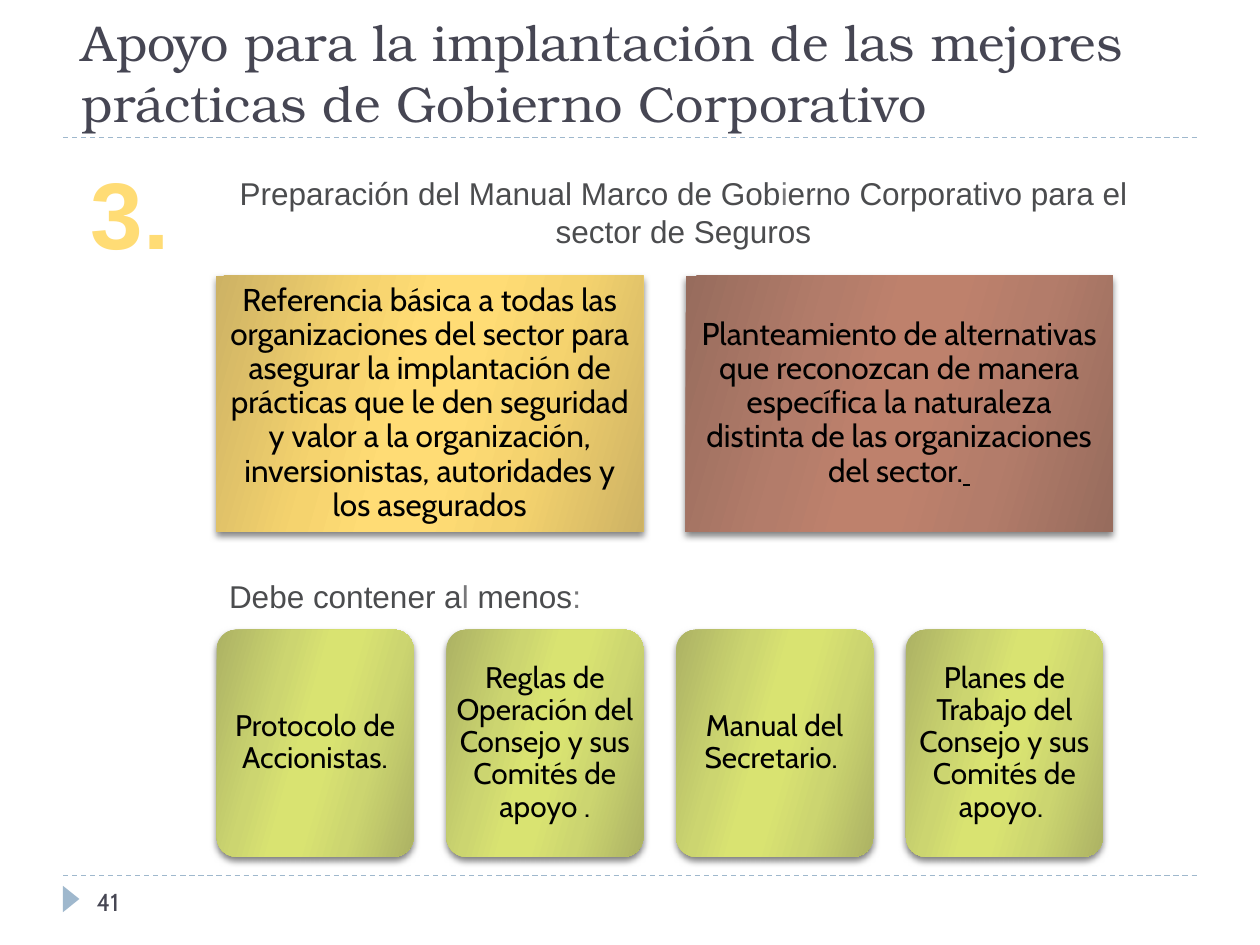
import pptx
import pptx.util
import pptx.dml.color
import pptx.enum.dml
import pptx.enum.shapes
import pptx.enum.text
import pptx.oxml
import pptx.oxml.ns
import lxml.etree

Pt = pptx.util.Pt
RGB = pptx.dml.color.RGBColor.from_string
SHAPE = pptx.enum.shapes.MSO_SHAPE
ALIGN = pptx.enum.text.PP_ALIGN
ANCHOR = pptx.enum.text.MSO_ANCHOR
qn = pptx.oxml.ns.qn
NS = pptx.oxml.ns.nsdecls("a")

COLORS = {
    "rule": "9FB8CD", "title": "464653", "body": "4B4C4E", "faint": "78787A",
    "black": "000000", "number_edge": "C2A651",
}
GRADIENTS = {
    "gold": ["CDB264", "F5D36E", "FFDC75"],
    "clay": ["976C5D", "B37C6A", "BE816C"],
    "lime": ["ACB264", "CCD570", "D9E371"],
}


def gradient(stops, angle):
    marks = "".join(
        f'<a:gs pos="{pos * 1000}"><a:srgbClr val="{color}"/></a:gs>' for pos, color in stops)
    return pptx.oxml.parse_xml(
        f'<a:gradFill {NS} rotWithShape="1"><a:gsLst>{marks}</a:gsLst>'
        f'<a:lin ang="{angle * 60000}" scaled="0"/></a:gradFill>')


def write(shape, pieces, size, font, align=ALIGN.LEFT, wrap=True):
    frame = shape.text_frame
    frame.word_wrap = wrap
    paragraph = frame.paragraphs[0]
    paragraph.alignment = align
    for text, color in pieces:
        run = paragraph.add_run()
        run.text = text
        run.font.size = Pt(size)
        run.font.name = font
        run.font.color.rgb = RGB(COLORS[color])
    return paragraph


deck = pptx.Presentation()
deck.slide_width, deck.slide_height = Pt(720), Pt(540)
slide = deck.slides.add_slide(deck.slide_layouts[5])
shapes = slide.shapes

title = shapes.title
title.left, title.top, title.width, title.height = Pt(39.6), Pt(5.8), Pt(648), Pt(73.4)
title.text_frame.vertical_anchor = ANCHOR.BOTTOM
title.text_frame.auto_size = pptx.enum.text.MSO_AUTO_SIZE.NONE
write(title, [("Apoyo para la implantación de las mejores prácticas de Gobierno Corporativo", "title")],
      28.8, "TeX Gyre Bonum")

for y in (78.5, 500.4):
    rule = shapes.add_connector(pptx.enum.shapes.MSO_CONNECTOR.STRAIGHT, Pt(36), Pt(y), Pt(684), Pt(y))
    rule.line.color.rgb = RGB(COLORS["rule"])
    rule.line.width = Pt(0.75)
    rule.line.dash_style = pptx.enum.dml.MSO_LINE.DASH
    lxml.etree.SubElement(rule.line._get_or_add_ln().getparent(), qn("a:effectLst"))

page_marker = shapes.add_shape(SHAPE.ISOSCELES_TRIANGLE, Pt(33.1), Pt(509), Pt(15.1), Pt(9.4))
page_marker.rotation = 90
page_marker.shadow.inherit = False
page_marker.fill.solid()
page_marker.fill.fore_color.rgb = RGB(COLORS["rule"])
page_marker.line.fill.background()

page_number = shapes.add_textbox(Pt(48.2), Pt(503.3), Pt(156), Pt(28.8))
write(page_number, [("41", "title")], 14, "Cabin")

step = shapes.add_textbox(Pt(44.6), Pt(85), Pt(59.8), Pt(72.7))
step_run = write(step, [("3.", "body")], 54, "Arial", ALIGN.CENTER, False).runs[0]
step_run.font.bold = True
step_props = step_run.font._element
step_props.replace(
    step_props.find(qn("a:solidFill")),
    gradient([(0, "AA830F"), (43, "FFDC75"), (48, "FFD65C"), (100, "AA830F")], 90))
step_props.insert(0, pptx.oxml.parse_xml(
    f'<a:ln {NS} w="9000"><a:solidFill><a:srgbClr val="{COLORS["number_edge"]}"/></a:solidFill></a:ln>'))

heading = shapes.add_textbox(Pt(106.6), Pt(95.8), Pt(568), Pt(51))
write(heading, [("Preparación del Manual Marco de Gob", "body"), ("i", "faint"),
                ("erno Corporativo para el sector de Seguros", "body")], 18, "Arial", ALIGN.CENTER)

contents_label = shapes.add_textbox(Pt(123.8), Pt(326.2), Pt(217.4), Pt(29))
write(contents_label, [("Debe contener a", "body"), ("l ", "faint"), ("menos", "body"), (":", "faint")],
      18, "Arial", wrap=False)

purposes = [
    ("Referencia básica a todas las organizaciones del sector para asegurar la implantación de "
     "prácticas que le den seguridad y valor a la organización, inversionistas, autoridades y "
     "los asegurados", "gold"),
    ("Planteamiento de alternativas que reconozcan de manera específica la naturaleza distinta "
     "de las organizaciones del sector.", "clay"),
]
documents = [
    "Protocolo de Accionistas.",
    "Reglas de Operación del Consejo y sus Comités de apoyo .",
    "Manual del Secretario. ",
    "Planes de Trabajo del Consejo y sus Comités de apoyo. ",
]
cards = [(SHAPE.RECTANGLE, 123.6 + 268.2 * i, 157.5, 244, 146.4, 5, 18, text, tone)
         for i, (text, tone) in enumerate(purposes)]
cards += [(SHAPE.ROUNDED_RECTANGLE, 123.8 + 131.3 * i, 359.8, 112.6, 129.8, 1.7, 17, text, "lime")
          for i, text in enumerate(documents)]

for preset, x, y, width, height, inset, size, text, tone in cards:
    card = shapes.add_shape(preset, Pt(x), Pt(y), Pt(width), Pt(height))
    if preset == SHAPE.ROUNDED_RECTANGLE:
        card.adjustments[0] = 0.1
    card.line.fill.background()
    card.shadow.inherit = False
    edge, middle, center = GRADIENTS[tone]
    outline = card.line._get_or_add_ln()
    outline.addprevious(gradient(
        [(0, edge), (30, middle), (45, center), (55, center), (73, middle), (100, edge)], 16))
    outline.getnext().append(pptx.oxml.parse_xml(
        f'<a:outerShdw {NS} blurRad="50800" dist="25400" dir="5400000" rotWithShape="0">'
        f'<a:srgbClr val="{COLORS["black"]}"><a:alpha val="50000"/></a:srgbClr></a:outerShdw>'))
    frame = card.text_frame
    frame.margin_left = frame.margin_right = frame.margin_top = frame.margin_bottom = Pt(inset)
    frame.vertical_anchor = ANCHOR.MIDDLE
    pieces = [(text, "black")] + ([(" ", "black")] if tone == "clay" else [])
    paragraph = write(card, pieces, size, "Cabin", ALIGN.CENTER)
    paragraph.line_spacing = 0.9
    if tone == "clay":
        paragraph.runs[-1].font.underline = True

deck.save("out.pptx")
